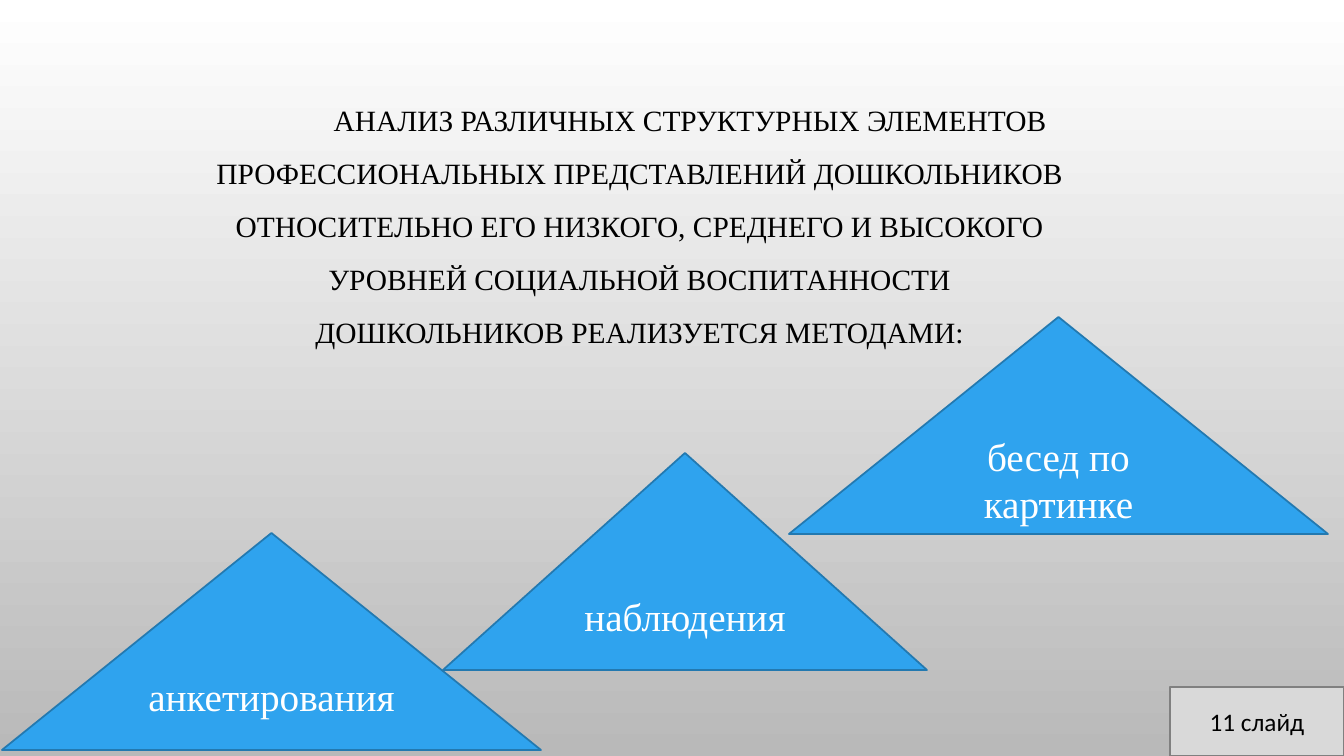
from pptx import Presentation
from pptx.dml.color import RGBColor
from pptx.enum.shapes import MSO_SHAPE
from pptx.enum.text import MSO_ANCHOR, PP_ALIGN
from pptx.util import Pt

RECTANGLE = MSO_SHAPE.RECTANGLE
TRIANGLE = MSO_SHAPE.ISOSCELES_TRIANGLE
MIDDLE = MSO_ANCHOR.MIDDLE
CENTER = PP_ALIGN.CENTER

WHITE = RGBColor(0xFF, 0xFF, 0xFF)
BLACK = RGBColor(0x00, 0x00, 0x00)
SHADE = RGBColor(0xB9, 0xB9, 0xB9)
BLUE = RGBColor(0x2F, 0xA3, 0xEE)
BLUE_EDGE = RGBColor(0x23, 0x79, 0xB0)
GRAY = RGBColor(0xD9, 0xD9, 0xD9)
GRAY_EDGE = RGBColor(0x80, 0x80, 0x80)

SERIF = "Times New Roman"
SANS = "Calibri"
WIDTH, HEIGHT = 1344, 756
EMU_PER_PX = 12192000 / WIDTH

HEADING = (
    "АНАЛИЗ РАЗЛИЧНЫХ СТРУКТУРНЫХ ЭЛЕМЕНТОВ ПРОФЕССИОНАЛЬНЫХ "
    "ПРЕДСТАВЛЕНИЙ ДОШКОЛЬНИКОВ ОТНОСИТЕЛЬНО ЕГО НИЗКОГО, СРЕДНЕГО "
    "И ВЫСОКОГО УРОВНЕЙ СОЦИАЛЬНОЙ ВОСПИТАННОСТИ ДОШКОЛЬНИКОВ "
    "РЕАЛИЗУЕТСЯ МЕТОДАМИ:"
)
METHODS = [
    ("анкетирования", 2, 533, 539),
    ("наблюдения", 443, 453, 484),
    ("бесед по картинке", 789, 317, 539),
]
METHOD_HEIGHT = 217


def px(length):
    return round(length * EMU_PER_PX)


class SlideBuilder:
    heading_format = {"name": SERIF, "size": Pt(21), "color": BLACK}
    method_format = {"name": SERIF, "size": Pt(28), "color": WHITE}
    number_format = {"name": SANS, "size": Pt(18), "color": BLACK}
    outline_width = Pt(1.25)

    def __init__(self, deck):
        self.slide = deck.slides.add_slide(deck.slide_layouts[6])

    def background(self, top_color, bottom_color):
        fill = self.slide.background.fill
        fill.gradient()
        fill.gradient_angle = 270
        for stop, color in zip(fill.gradient_stops, (top_color, bottom_color)):
            stop.color.rgb = color

    def add_text(self, box, text, text_format):
        frame = box.text_frame
        frame.word_wrap = True
        frame.vertical_anchor = MIDDLE
        para = frame.paragraphs[0]
        para.alignment = CENTER
        span = para.add_run()
        span.text = text
        for key, value in text_format.items():
            if key == "color":
                span.font.color.rgb = value
            else:
                setattr(span.font, key, value)
        return para

    def heading(self, text, left, top, width, height, indent):
        box = self.slide.shapes.add_textbox(*map(px, (left, top, width, height)))
        para = self.add_text(box, text, self.heading_format)
        para.line_spacing = 1.5
        properties = para._p.get_or_add_pPr()
        properties.set("marL", "0")
        properties.set("indent", str(px(indent)))

    def shape(self, kind, text, bounds, fill, edge, text_format):
        box = self.slide.shapes.add_shape(kind, *map(px, bounds))
        box.shadow.inherit = False
        box.fill.solid()
        box.fill.fore_color.rgb = fill
        box.line.color.rgb = edge
        box.line.width = self.outline_width
        self.add_text(box, text, text_format)

    def method(self, text, left, top, width):
        bounds = (left, top, width, METHOD_HEIGHT)
        self.shape(TRIANGLE, text, bounds, BLUE, BLUE_EDGE, self.method_format)

    def number(self, text, left, top, width, height):
        bounds = (left, top, width, height)
        self.shape(RECTANGLE, text, bounds, GRAY, GRAY_EDGE, self.number_format)


def main():
    deck = Presentation()
    deck.slide_width = px(WIDTH)
    deck.slide_height = px(HEIGHT)
    page = SlideBuilder(deck)
    page.background(WHITE, SHADE)
    page.heading(HEADING, 192, 42, 895, 350, indent=101)
    page.number("11 слайд", 1170, 687, 174, 69)
    for method in METHODS:
        page.method(*method)
    deck.save("out.pptx")


if __name__ == "__main__":
    main()
